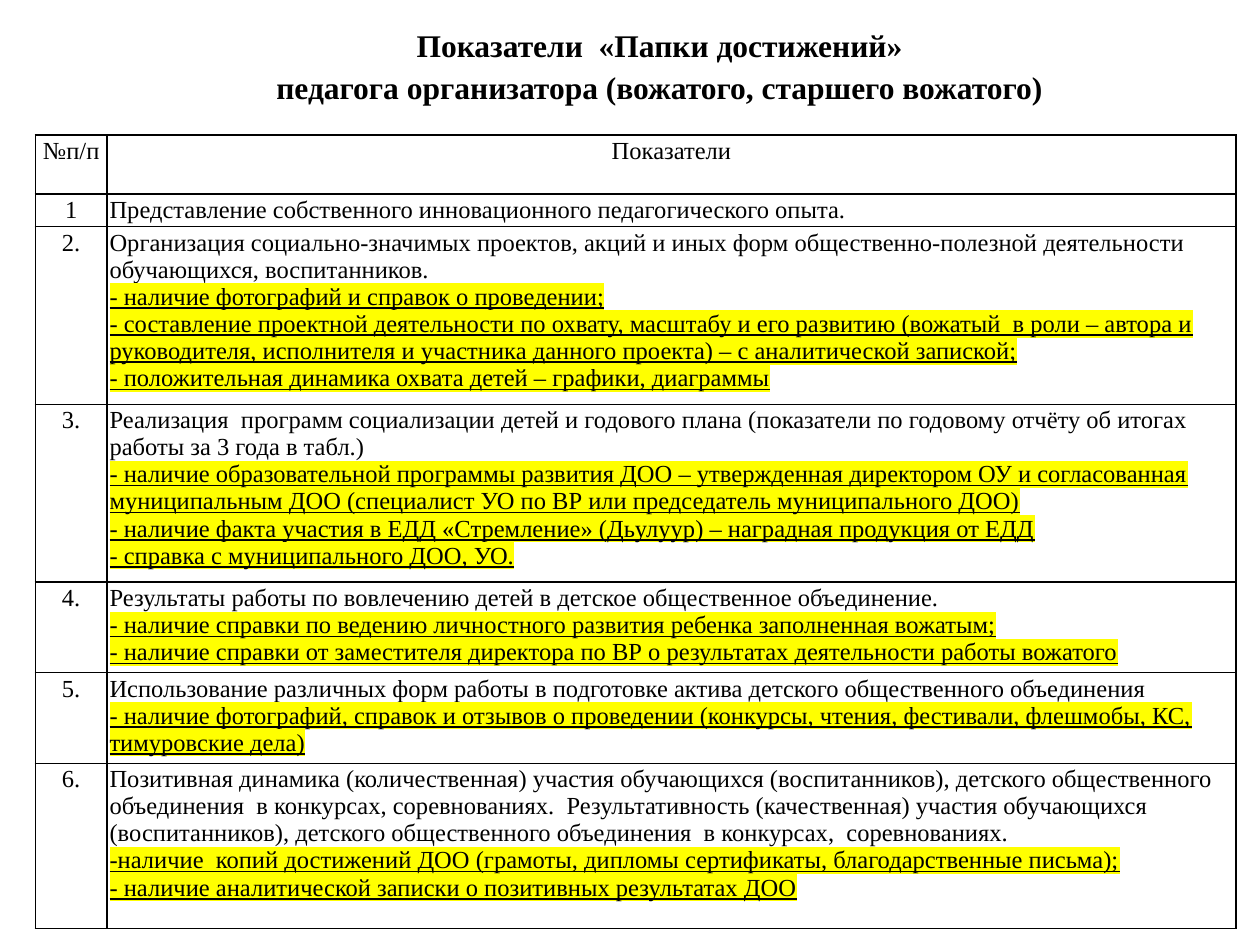
from lxml import etree
from pptx import Presentation
from pptx.dml.color import RGBColor
from pptx.enum.text import MSO_ANCHOR, MSO_AUTO_SIZE, PP_ALIGN
from pptx.oxml import parse_xml
from pptx.oxml.ns import nsdecls, qn
from pptx.util import Inches, Pt

BLACK = RGBColor(0x00, 0x00, 0x00)
YELLOW = RGBColor(0xFF, 0xFF, 0x00)
FONT = "Times New Roman"

COLUMN_WIDTHS = [0.57, 8.96]
ROW_HEIGHTS = [0.47, 0.26, 1.41, 1.41, 0.72, 0.72, 1.31]

# Each row: number, indicator, then the evidence to be highlighted
ROWS = [
    ("№п/п", "Показатели"),
    ("1", "Представление собственного инновационного педагогического опыта."),
    ("2.",
     "Организация социально-значимых проектов, акций и иных форм общественно-полезной "
     "деятельности обучающихся, воспитанников.",
     "- наличие фотографий и справок о проведении;",
     "- составление проектной деятельности по охвату, масштабу и его развитию (вожатый  в роли "
     "– автора и руководителя, исполнителя и участника данного проекта) – с аналитической "
     "запиской;",
     "- положительная динамика охвата детей – графики, диаграммы"),
    ("3.",
     "Реализация  программ социализации детей и годового плана (показатели по годовому отчёту "
     "об итогах  работы за 3 года в табл.)",
     "- наличие образовательной программы развития ДОО – утвержденная директором ОУ и "
     "согласованная муниципальным ДОО (специалист УО по ВР или председатель муниципального "
     "ДОО)",
     "- наличие факта участия в ЕДД «Стремление» (Дьулуур) – наградная продукция от ЕДД",
     "- справка с муниципального ДОО, УО."),
    ("4.",
     "Результаты работы по вовлечению детей в детское общественное объединение.",
     "- наличие справки по ведению личностного развития ребенка заполненная вожатым;",
     "- наличие справки от заместителя директора по ВР о результатах деятельности работы "
     "вожатого"),
    ("5.",
     "Использование различных форм работы в подготовке актива детского общественного "
     "объединения",
     "- наличие фотографий, справок и отзывов о проведении (конкурсы, чтения, фестивали, "
     "флешмобы, КС, тимуровские дела)"),
    ("6.",
     "Позитивная динамика (количественная) участия обучающихся (воспитанников), детского "
     "общественного объединения  в конкурсах, соревнованиях.  Результативность (качественная) "
     "участия обучающихся (воспитанников), детского общественного объединения  в конкурсах,  "
     "соревнованиях.",
     "-наличие  копий достижений ДОО (грамоты, дипломы сертификаты, благодарственные письма);",
     "- наличие аналитической записки о позитивных результатах ДОО"),
]


def format_paragraph(paragraph, size, align, bold=False, highlighted=False):
    paragraph.alignment = align
    for run in paragraph.runs:
        run.font.name = FONT
        run.font.size = Pt(size)
        run.font.bold = bold
        run.font.color.rgb = BLACK
        if highlighted:
            run.font.underline = True
            highlight = parse_xml(
                f'<a:highlight {nsdecls("a")}><a:srgbClr val="{YELLOW}"/></a:highlight>')
            run.font._element.find(qn("a:solidFill")).addnext(highlight)


def frame_cell(cell):
    """Clear the fill, narrow the margins and draw a black border on all sides."""
    cell.fill.background()
    cell.margin_left = cell.margin_right = Inches(0.02)
    cell.margin_top = cell.margin_bottom = Inches(0.02)
    properties = cell._tc.get_or_add_tcPr()
    for position, side in enumerate(("lnL", "lnR", "lnT", "lnB")):
        border = etree.Element(qn(f"a:{side}"), w=str(Pt(1)))
        fill = etree.SubElement(border, qn("a:solidFill"))
        etree.SubElement(fill, qn("a:srgbClr"), val=str(BLACK))
        properties.insert(position, border)


prs = Presentation()
prs.slide_width, prs.slide_height = Inches(10), Inches(7.5)
slide = prs.slides.add_slide(prs.slide_layouts[5])

title = slide.shapes.title
title.left, title.top = Inches(1.69), Inches(0.13)
title.width, title.height = Inches(7.09), Inches(0.85)
title_frame = title.text_frame
title_frame.text = "Показатели  «Папки достижений»\nпедагога организатора (вожатого, старшего вожатого)"
title_frame.vertical_anchor = MSO_ANCHOR.TOP
title_frame.auto_size = MSO_AUTO_SIZE.NONE
for line in title_frame.paragraphs:
    format_paragraph(line, 18, PP_ALIGN.CENTER, bold=True)
    line.line_spacing = 1.1

indicators = slide.shapes.add_table(
    len(ROWS), len(COLUMN_WIDTHS), Inches(0.28), Inches(1.07),
    Inches(sum(COLUMN_WIDTHS)), Inches(sum(ROW_HEIGHTS))).table
indicators.first_row = indicators.horz_banding = False
for column, width in zip(indicators.columns, COLUMN_WIDTHS):
    column.width = Inches(width)
for row, height in zip(indicators.rows, ROW_HEIGHTS):
    row.height = Inches(height)

for row_index, (number, *lines) in enumerate(ROWS):
    number_cell, indicator_cell = indicators.rows[row_index].cells
    number_cell.text_frame.text = number
    indicator_cell.text_frame.text = "\n".join(lines)
    frame_cell(number_cell)
    frame_cell(indicator_cell)
    format_paragraph(number_cell.text_frame.paragraphs[0], 14, PP_ALIGN.CENTER)
    align = PP_ALIGN.CENTER if row_index == 0 else PP_ALIGN.LEFT
    for line_index, paragraph in enumerate(indicator_cell.text_frame.paragraphs):
        format_paragraph(paragraph, 14, align, highlighted=line_index > 0)

prs.save("out.pptx")
